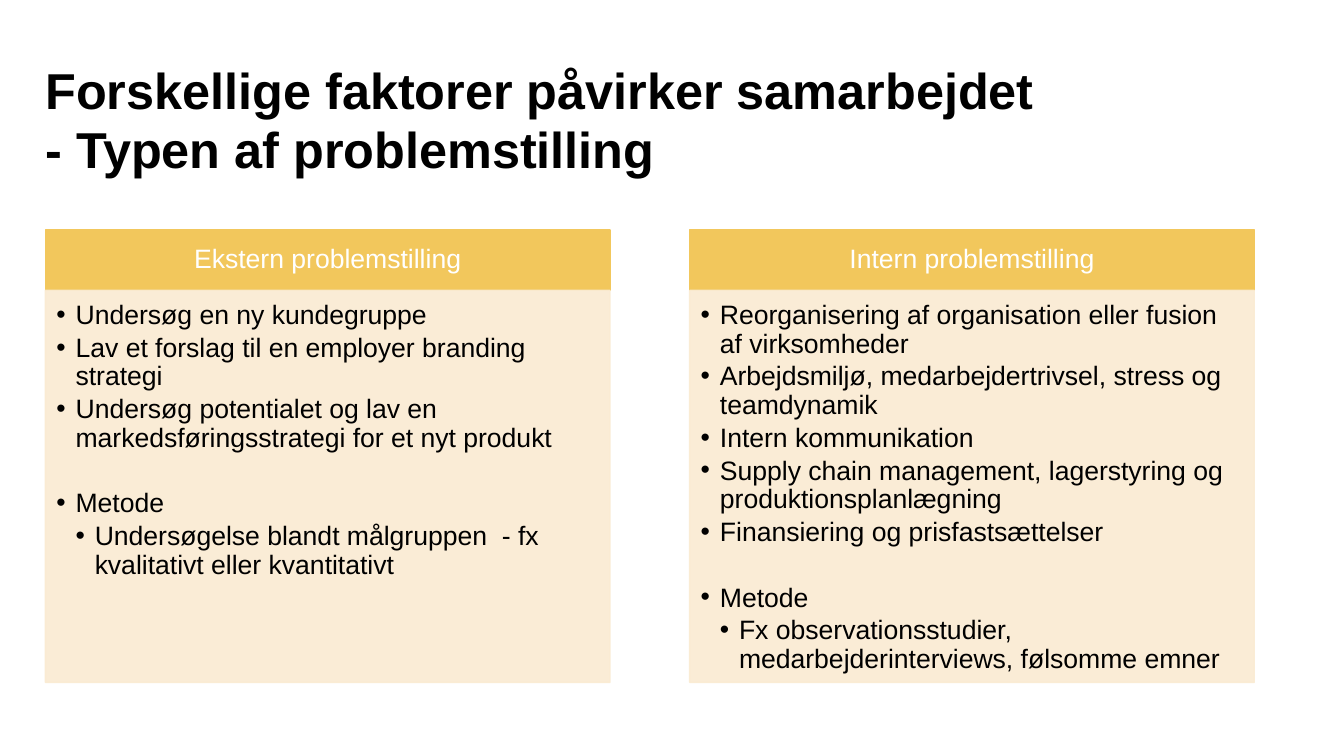
import pptx
import pptx.util
import pptx.dml.color
import pptx.enum.text
from lxml import etree

PX = 9144  # EMU per px, 100 px to the inch
THEME = {
    "font": "Arial", "title_size": 36, "text_size": 19,
    "dark": "000000", "light": "FFFFFF", "gold": "F2C75C", "cream": "FAEBD2",
    "cream_alpha": 90,
}
COLUMN_LEFTS = (45, 684)
COLUMN_WIDTH = 560
HEADER_TOP, HEADER_HEIGHT, LIST_HEIGHT = 228, 60, 389
INDENT = 19
LIST_GAP, METHOD_GAP = 2.85, 23.4  # points

COLUMNS = [
    ("Ekstern problemstilling",
     ["Undersøg en ny kundegruppe",
      "Lav et forslag til en employer branding strategi",
      "Undersøg potentialet og lav en markedsføringsstrategi for et nyt produkt"],
     "Undersøgelse blandt målgruppen  - fx kvalitativt eller kvantitativt"),
    ("Intern problemstilling",
     ["Reorganisering af organisation eller fusion af virksomheder",
      "Arbejdsmiljø, medarbejdertrivsel, stress og teamdynamik",
      "Intern kommunikation",
      "Supply chain management, lagerstyring og produktionsplanlægning",
      "Finansiering og prisfastsættelser"],
     "Fx observationsstudier, medarbejderinterviews, følsomme emner"),
]


def set_up_box(box, bounds, insets, anchor, color=None, alpha=100):
    """Place a placeholder, set its margins and give it a fill and outline."""
    box.left, box.top, box.width, box.height = (n * PX for n in bounds)
    frame = box.text_frame
    frame.margin_left, frame.margin_top, frame.margin_right, frame.margin_bottom = (
        n * PX for n in insets)
    frame.vertical_anchor = anchor
    frame.word_wrap = True
    frame.auto_size = pptx.enum.text.MSO_AUTO_SIZE.NONE
    if color:
        box.line.width = pptx.util.Pt(1)
        for paint in (box.fill, box.line.fill):
            paint.solid()
            paint.fore_color.rgb = pptx.dml.color.RGBColor.from_string(color)
        if alpha < 100:
            for tone in box.element.spPr.iter(pptx.oxml.ns.qn("a:srgbClr")):
                etree.SubElement(tone, pptx.oxml.ns.qn("a:alpha"), val=str(alpha * 1000))


def style(paragraph, size, color, align, spacing, bold=False):
    paragraph.alignment = align
    paragraph.line_spacing = spacing
    paragraph.font.name = THEME["font"]
    paragraph.font.size = pptx.util.Pt(size)
    paragraph.font.bold = bold
    paragraph.font.color.rgb = pptx.dml.color.RGBColor.from_string(color)


ANCHOR = pptx.enum.text.MSO_ANCHOR
ALIGN = pptx.enum.text.PP_ALIGN

deck = pptx.Presentation()
deck.slide_width, deck.slide_height = 1333 * PX, 750 * PX
slide = deck.slides.add_slide(deck.slide_layouts.get_by_name("Comparison"))

# Title
title = slide.shapes.title
set_up_box(title, (45, 62, 1199, 73), (0, 0, 0, 0), ANCHOR.TOP)
title.text_frame.text = "Forskellige faktorer påvirker samarbejdet\v- Typen af problemstilling"
style(title.text_frame.paragraphs[0], THEME["title_size"], THEME["dark"], ALIGN.LEFT, 0.97, True)

# Two columns: a header placeholder above a list placeholder
for number, (left, (heading, topics, method)) in enumerate(zip(COLUMN_LEFTS, COLUMNS)):
    header = slide.placeholders[1 + 2 * number]
    set_up_box(header, (left, HEADER_TOP, COLUMN_WIDTH, HEADER_HEIGHT),
               (15, 8, 15, 8), ANCHOR.MIDDLE, THEME["gold"])
    header.text_frame.text = heading
    heading_line = header.text_frame.paragraphs[0]
    heading_line.space_before = pptx.util.Pt(0)
    style(heading_line, THEME["text_size"], THEME["light"], ALIGN.CENTER, 0.9)

    factors = slide.placeholders[2 + 2 * number]
    set_up_box(factors, (left, HEADER_TOP + HEADER_HEIGHT, COLUMN_WIDTH, LIST_HEIGHT),
               (11, 11, 15, 17), ANCHOR.TOP, THEME["cream"], THEME["cream_alpha"])
    factors.text_frame.text = "\n".join([*topics, "Metode", method])
    for row, item in enumerate(factors.text_frame.paragraphs):
        item.level = 2 if row == len(topics) + 1 else 1
        properties = item._p.get_or_add_pPr()
        properties.set("marL", str(item.level * INDENT * PX))
        properties.set("indent", str(-INDENT * PX))
        etree.SubElement(properties, pptx.oxml.ns.qn("a:buFont"), typeface=THEME["font"])
        etree.SubElement(properties, pptx.oxml.ns.qn("a:buChar"), char="•")
        item.space_before = pptx.util.Pt(METHOD_GAP if row == len(topics) else 0)
        item.space_after = pptx.util.Pt(LIST_GAP)
        style(item, THEME["text_size"], THEME["dark"], ALIGN.LEFT, 0.9)

deck.save("out.pptx")
